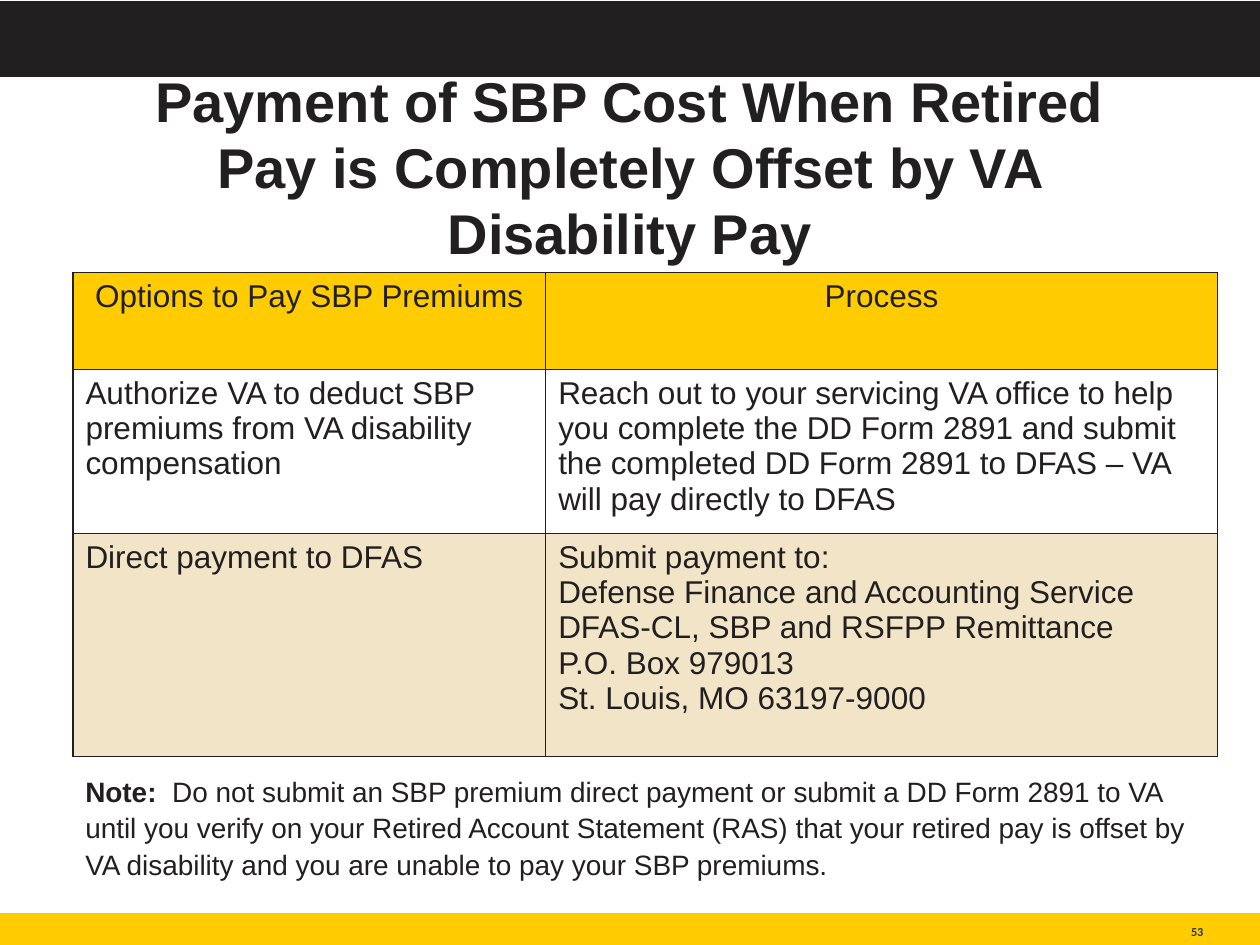
from lxml.etree import SubElement
from pptx import Presentation
from pptx.dml.color import RGBColor
from pptx.enum.shapes import MSO_SHAPE
from pptx.enum.text import MSO_ANCHOR, PP_ALIGN
from pptx.oxml.ns import qn
from pptx.util import Cm, Pt

BLACK = RGBColor(0x22, 0x1F, 0x20)
GOLD = RGBColor(0xFF, 0xCC, 0x01)
SAND = RGBColor(0xF1, 0xE4, 0xC7)
WHITE = RGBColor(0xFF, 0xFF, 0xFF)
NUMBER_GRAY = RGBColor(0x2F, 0x37, 0x2F)


def write_text(paragraph, text, size=18, bold=False, font="Arial",
               color=BLACK, align=PP_ALIGN.LEFT, line_spacing=None):
    """Add one formatted run to a paragraph."""
    paragraph.alignment = align
    if line_spacing:
        paragraph.line_spacing = line_spacing
    run = paragraph.add_run()
    run.text = text
    run.font.name = font
    run.font.size = Pt(size)
    run.font.bold = bold
    run.font.color.rgb = color


class SlideBuilder:
    """Holds the current slide and its border style."""

    def __init__(self, slide, border_color=BLACK, border_width=Pt(1)):
        self.slide = slide
        self.border_color = border_color
        self.border_width = border_width

    def bar(self, top, height, color):
        shape = self.slide.shapes.add_shape(
            MSO_SHAPE.RECTANGLE, 0, Cm(top), Cm(25.4), Cm(height))
        shape.shadow.inherit = False
        shape.fill.solid()
        shape.fill.fore_color.rgb = color
        shape.line.color.rgb = color
        shape.line.width = Pt(1)

    def text_box(self, left, top, width, height, runs,
                 anchor=MSO_ANCHOR.TOP, wrap=True, inset=True, **style):
        box = self.slide.shapes.add_textbox(
            Cm(left), Cm(top), Cm(width), Cm(height))
        frame = box.text_frame
        frame.word_wrap = wrap
        frame.vertical_anchor = anchor
        if not inset:
            frame.margin_left = frame.margin_right = 0
            frame.margin_top = frame.margin_bottom = 0
        for text, bold in runs:
            write_text(frame.paragraphs[0], text, bold=bold, **style)

    def cell_border(self, cell):
        properties = cell._tc.get_or_add_tcPr()
        for position, side in enumerate(("a:lnL", "a:lnR", "a:lnT", "a:lnB")):
            line = properties.makeelement(
                qn(side), {"w": str(int(self.border_width))})
            fill = SubElement(line, qn("a:solidFill"))
            SubElement(fill, qn("a:srgbClr"), val=str(self.border_color))
            properties.insert(position, line)

    def table(self, left, top, widths, heights, rows, fills):
        table = self.slide.shapes.add_table(
            len(rows), len(widths), Cm(left), Cm(top),
            Cm(sum(widths)), Cm(sum(heights))).table
        table.first_row = table.horz_banding = False
        for column, width in zip(table.columns, widths):
            column.width = Cm(width)
        for index, (texts, height, fill) in enumerate(zip(rows, heights, fills)):
            table.rows[index].height = Cm(height)
            align = PP_ALIGN.CENTER if index == 0 else PP_ALIGN.LEFT
            for cell, text in zip(table.rows[index].cells, texts):
                cell.fill.solid()
                cell.fill.fore_color.rgb = fill
                self.cell_border(cell)
                frame = cell.text_frame
                for number, line in enumerate(text.split("\n")):
                    paragraph = frame.add_paragraph() if number else frame.paragraphs[0]
                    write_text(paragraph, line, align=align)


def main():
    presentation = Presentation()
    presentation.slide_width = Cm(25.4)
    presentation.slide_height = Cm(19.05)
    builder = SlideBuilder(
        presentation.slides.add_slide(presentation.slide_layouts[6]))

    # Top and bottom bars, slide number
    builder.bar(0.03, 1.5, BLACK)
    builder.bar(18.42, 0.63, GOLD)
    builder.text_box(22.05, 18.42, 2.21, 0.51, [("53", True)],
                     anchor=MSO_ANCHOR.BOTTOM, wrap=False, inset=False, size=7,
                     font="Calibri", color=NUMBER_GRAY, align=PP_ALIGN.RIGHT)

    # Payment options
    builder.table(
        1.47, 5.49, widths=(9.53, 13.54), heights=(1.96, 3.1, 4.5),
        rows=[
            ("Options to Pay SBP Premiums", "Process"),
            ("Authorize VA to deduct SBP premiums from VA disability compensation",
             "Reach out to your servicing VA office to help you complete the "
             "DD Form 2891 and submit the completed DD Form 2891 to DFAS – VA "
             "will pay directly to DFAS"),
            ("Direct payment to DFAS",
             "Submit payment to:\n"
             "Defense Finance and Accounting Service\n"
             "DFAS-CL, SBP and RSFPP Remittance\n"
             "P.O. Box 979013\n"
             "St. Louis, MO 63197-9000"),
        ],
        fills=(GOLD, WHITE, SAND))

    # Note
    builder.text_box(
        1.47, 15.42, 23.07, 2.31,
        [("Note:  ", True),
         ("Do not submit an SBP premium direct payment or submit a DD Form 2891 "
          "to VA until you verify on your Retired Account Statement (RAS) that "
          "your retired pay is offset by VA disability and you are unable to "
          "pay your SBP premiums.", False)],
        size=16, line_spacing=1.09)

    # Title
    builder.text_box(
        1.75, 2.01, 21.9, 2.79,
        [("Payment of SBP Cost When Retired Pay is Completely Offset by VA "
          "Disability Pay", True)],
        anchor=MSO_ANCHOR.MIDDLE, size=32, align=PP_ALIGN.CENTER,
        line_spacing=0.98)

    presentation.save("out.pptx")


if __name__ == "__main__":
    main()
